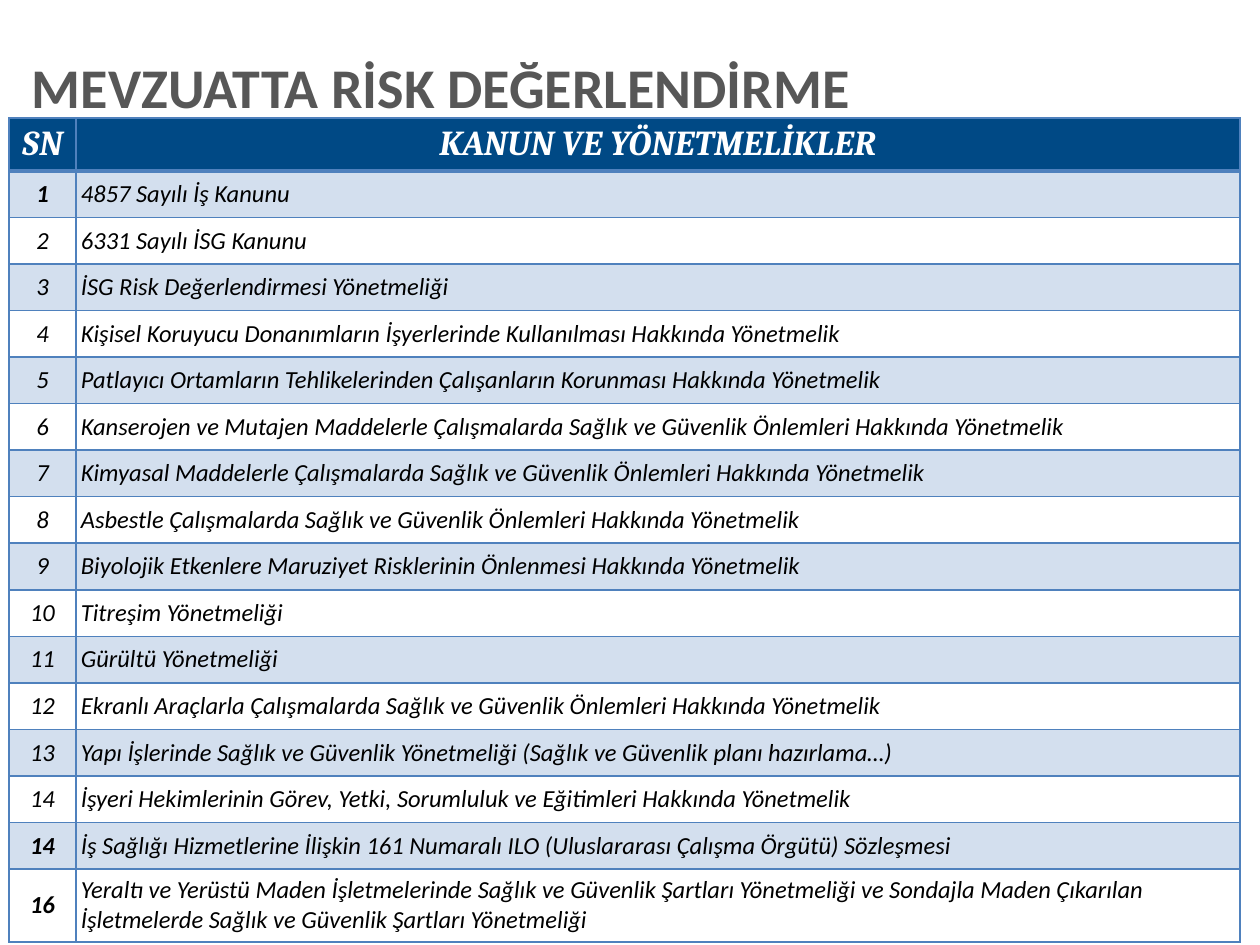
from lxml.etree import SubElement
from pptx import Presentation
from pptx.dml.color import RGBColor
from pptx.enum.text import MSO_ANCHOR, PP_ALIGN
from pptx.oxml.ns import qn
from pptx.util import Pt

PX = 914400 // 126
HEADING = "MEVZUATTA RİSK DEĞERLENDİRME"
HEADERS = ("SN", "KANUN VE YÖNETMELİKLER")
REGULATIONS = [
    ("1", "4857 Sayılı İş Kanunu"),
    ("2", "6331 Sayılı İSG Kanunu"),
    ("3", "İSG Risk Değerlendirmesi Yönetmeliği"),
    ("4", "Kişisel Koruyucu Donanımların İşyerlerinde Kullanılması Hakkında Yönetmelik"),
    ("5", "Patlayıcı Ortamların Tehlikelerinden Çalışanların Korunması Hakkında Yönetmelik"),
    ("6", "Kanserojen ve Mutajen Maddelerle Çalışmalarda Sağlık ve Güvenlik Önlemleri Hakkında Yönetmelik"),
    ("7", "Kimyasal Maddelerle Çalışmalarda Sağlık ve Güvenlik Önlemleri Hakkında Yönetmelik"),
    ("8", "Asbestle Çalışmalarda Sağlık ve Güvenlik Önlemleri Hakkında Yönetmelik"),
    ("9", "Biyolojik Etkenlere Maruziyet Risklerinin Önlenmesi Hakkında Yönetmelik"),
    ("10", "Titreşim Yönetmeliği"),
    ("11", "Gürültü Yönetmeliği"),
    ("12", "Ekranlı Araçlarla Çalışmalarda Sağlık ve Güvenlik Önlemleri Hakkında Yönetmelik"),
    ("13", "Yapı İşlerinde Sağlık ve Güvenlik Yönetmeliği (Sağlık ve Güvenlik planı hazırlama…)"),
    ("14", "İşyeri Hekimlerinin Görev, Yetki, Sorumluluk ve Eğitimleri Hakkında Yönetmelik"),
    ("14", "İş Sağlığı Hizmetlerine İlişkin 161 Numaralı ILO (Uluslararası Çalışma Örgütü) Sözleşmesi"),
    ("16", "Yeraltı ve Yerüstü Maden İşletmelerinde Sağlık ve Güvenlik Şartları Yönetmeliği ve "
           "Sondajla Maden Çıkarılan İşletmelerde Sağlık ve Güvenlik Şartları Yönetmeliği"),
]
BOLD_NUMBER_ROWS = (1, 15, 16)
COLUMN_WIDTHS = (67, 1164)
CELL_INSETS = (9, 5)
TABLE_LEFT, TABLE_TOP, TABLE_HEIGHT = 9, 118, 824
HEADER_HEIGHT, LAST_HEIGHT = 53, 73
NAVY, BAND, BORDER = "004985", "D3DFEE", "4F81BD"


def px(length):
    return round(length * PX)


def color(hex_code):
    return RGBColor.from_string(hex_code)


def add_text(paragraph, text, font, size, hex_code, bold, italic):
    run = paragraph.add_run()
    run.text = text
    run.font.name, run.font.size = font, Pt(size)
    run.font.bold, run.font.italic = bold, italic
    run.font.color.rgb = color(hex_code)


def add_borders(cell, top, bottom):
    properties = cell._tc.get_or_add_tcPr()
    for side, width in (("L", 1), ("R", 1), ("T", top), ("B", bottom)):
        line = SubElement(properties, qn(f"a:ln{side}"), w=str(Pt(width)))
        SubElement(SubElement(line, qn("a:solidFill")), qn("a:srgbClr"), val=BORDER)


def fill_cell(cell, row, column, text):
    add_borders(cell, 2.25 if row == 1 else 1, 2.25 if row == 0 else 1)
    if row % 2 or row == 0:
        cell.fill.solid()
        cell.fill.fore_color.rgb = color(BAND if row else NAVY)
    else:
        cell.fill.background()
    cell.margin_left = cell.margin_right = px(CELL_INSETS[column])
    cell.margin_top = cell.margin_bottom = 0
    cell.vertical_anchor = MSO_ANCHOR.MIDDLE
    paragraph = cell.text_frame.paragraphs[0]
    centred = row == 0 or column == 0
    paragraph.alignment = PP_ALIGN.CENTER if centred else PP_ALIGN.LEFT
    if row == 0:
        add_text(paragraph, text, "Cambria", 20, "FFFFFF", True, True)
    else:
        bold = column == 0 and row in BOLD_NUMBER_ROWS
        add_text(paragraph, text, "Calibri", 14, "000000", bold, True)


def add_heading(slide):
    title = slide.shapes.title
    title.left, title.top, title.width, title.height = map(px, (32, 45, 1215, 90))
    frame = title.text_frame
    frame.word_wrap = True
    frame.vertical_anchor = MSO_ANCHOR.MIDDLE
    frame.margin_left = frame.margin_right = 0
    frame.margin_top = frame.margin_bottom = px(6)
    paragraph = frame.paragraphs[0]
    paragraph.alignment = PP_ALIGN.LEFT
    paragraph.line_spacing = 0.9
    add_text(paragraph, HEADING, "Calibri", 32, "575757", True, False)


def add_regulations(slide):
    rows = [HEADERS, *REGULATIONS]
    middle_count = len(rows) - 2
    middle_height = (TABLE_HEIGHT - HEADER_HEIGHT - LAST_HEIGHT) / middle_count
    heights = [HEADER_HEIGHT, *[middle_height] * middle_count, LAST_HEIGHT]
    table = slide.shapes.add_table(
        len(rows), len(HEADERS), px(TABLE_LEFT), px(TABLE_TOP),
        px(sum(COLUMN_WIDTHS)), px(TABLE_HEIGHT)).table
    table.horz_banding = False
    for column, width in zip(table.columns, COLUMN_WIDTHS):
        column.width = px(width)
    for row, (texts, height) in enumerate(zip(rows, heights)):
        table.rows[row].height = px(height)
        for column, text in enumerate(texts):
            fill_cell(table.cell(row, column), row, column, text)


def main():
    presentation = Presentation()
    presentation.slide_width, presentation.slide_height = px(1260), px(945)
    slide = presentation.slides.add_slide(presentation.slide_layouts[5])
    add_heading(slide)
    add_regulations(slide)
    presentation.save("out.pptx")


if __name__ == "__main__":
    main()
